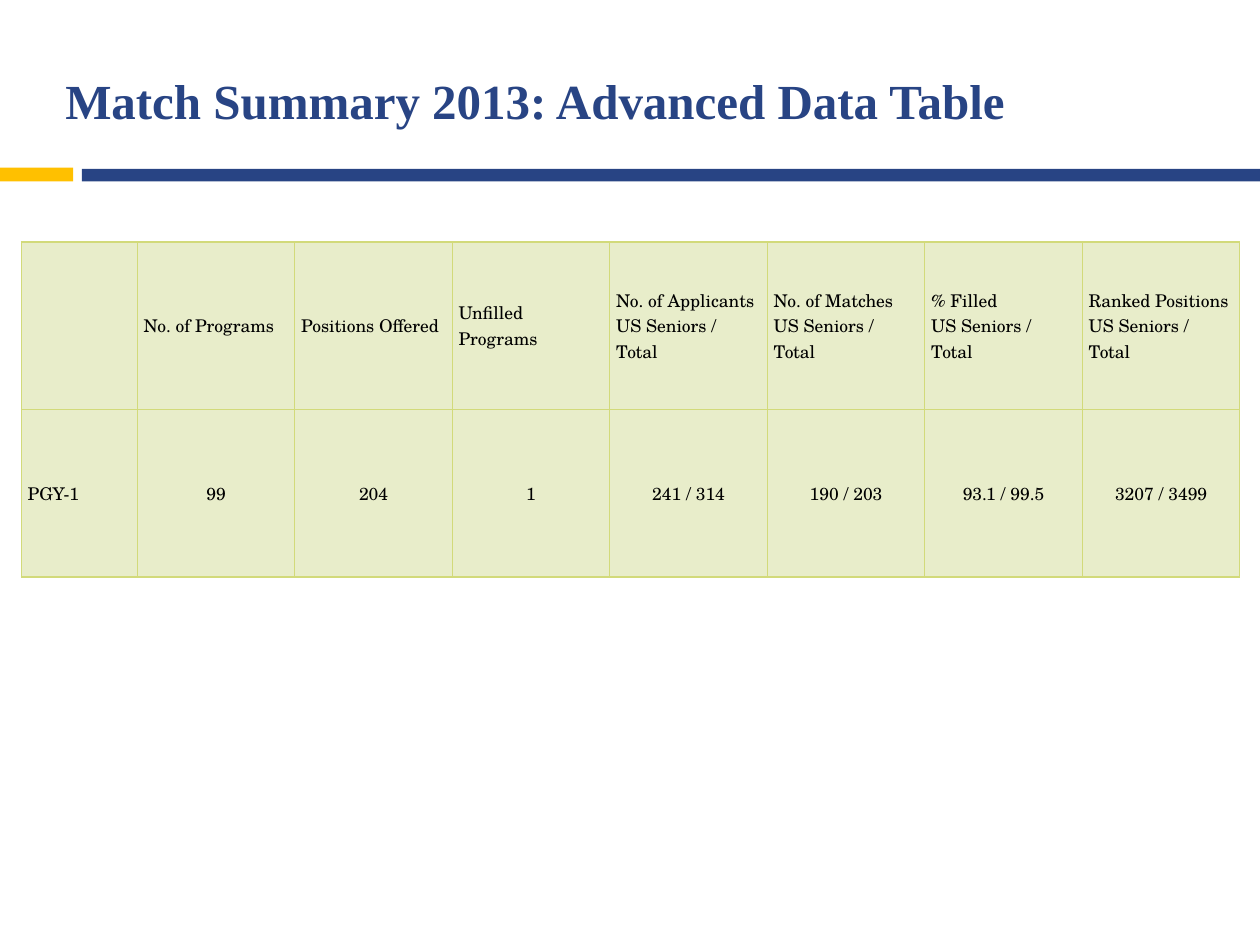
from dataclasses import dataclass

import pptx
import pptx.dml.color
import pptx.enum.shapes
import pptx.enum.text
import pptx.oxml
import pptx.oxml.ns
import pptx.util
from pptx.util import Inches

RGBColor = pptx.dml.color.RGBColor
Align = pptx.enum.text.PP_ALIGN
Anchor = pptx.enum.text.MSO_ANCHOR


@dataclass(frozen=True)
class Theme:
    navy: str = "284484"
    gold: str = "FFC000"
    cell_fill: str = "E8EDCA"
    cell_border: str = "D2DA7A"
    text: str = "000000"
    title_font: str = "Times New Roman"
    table_font: str = "TeX Gyre Schola"
    title_size: int = 28
    table_size: int = 10
    border_width: float = 0.79


@dataclass(frozen=True)
class Bar:
    left: float
    top: float
    width: float
    height: float
    color: str


THEME = Theme()
BARS = [
    Bar(0, 1.33, 0.58, 0.11, THEME.gold),
    Bar(0.65, 1.34, 9.35, 0.1, THEME.navy),
]
SENIORS = "\nUS Seniors / Total"
HEADERS = ["", "No. of Programs", "Positions Offered", "Unfilled Programs"] + [
    measure + SENIORS
    for measure in ("No. of Applicants", "No. of Matches", "% Filled", "Ranked Positions")
]
RESULTS = ["PGY-1", "99", "204", "1", "241 / 314", "190 / 203", "93.1 / 99.5", "3207 / 3499"]
LABEL_WIDTH, VALUE_WIDTH, ROW_HEIGHT = 0.92, 1.25, 1.33


def style_font(font, name: str, size: int, color: str, bold: bool = False) -> None:
    font.name = name
    font.size = pptx.util.Pt(size)
    font.bold = bold
    font.color.rgb = RGBColor.from_string(color)


def add_title(slide, text: str) -> None:
    title = slide.shapes.add_textbox(Inches(0.42), Inches(0.25), Inches(9.17), Inches(1.08))
    frame = title.text_frame
    frame.word_wrap = True
    frame.vertical_anchor = Anchor.MIDDLE
    frame.text = text
    style_font(frame.paragraphs[0].font, THEME.title_font, THEME.title_size, THEME.navy, True)


def add_bar(slide, bar: Bar) -> None:
    shape = slide.shapes.add_shape(
        pptx.enum.shapes.MSO_SHAPE.RECTANGLE,
        Inches(bar.left), Inches(bar.top), Inches(bar.width), Inches(bar.height),
    )
    shape.shadow.inherit = False
    shape.fill.solid()
    shape.fill.fore_color.rgb = RGBColor.from_string(bar.color)
    shape.line.fill.background()


def add_borders(cell) -> None:
    properties = cell._tc.get_or_add_tcPr()
    width = pptx.util.Pt(THEME.border_width)
    for position, side in enumerate(("lnL", "lnR", "lnT", "lnB")):
        border = pptx.oxml.parse_xml(
            f'<a:{side} {pptx.oxml.ns.nsdecls("a")} w="{width}"><a:solidFill>'
            f'<a:srgbClr val="{THEME.cell_border}"/></a:solidFill></a:{side}>'
        )
        properties.insert(position, border)


def fill_cell(cell, text: str, alignment) -> None:
    cell.text = text
    cell.vertical_anchor = Anchor.MIDDLE
    cell.margin_left = cell.margin_right = Inches(0.05)
    cell.margin_top = cell.margin_bottom = 0
    cell.fill.solid()
    cell.fill.fore_color.rgb = RGBColor.from_string(THEME.cell_fill)
    add_borders(cell)
    for paragraph in cell.text_frame.paragraphs:
        paragraph.alignment = alignment
        style_font(paragraph.font, THEME.table_font, THEME.table_size, THEME.text)


def add_match_table(slide, rows: list[list[str]]) -> None:
    widths = [LABEL_WIDTH] + [VALUE_WIDTH] * (len(rows[0]) - 1)
    table = slide.shapes.add_table(
        len(rows), len(widths),
        Inches(0.17), Inches(1.92), Inches(sum(widths)), Inches(ROW_HEIGHT * len(rows)),
    ).table
    table.first_row = table.horz_banding = False
    for column, width in zip(table.columns, widths):
        column.width = Inches(width)
    for row_index, texts in enumerate(rows):
        table.rows[row_index].height = Inches(ROW_HEIGHT)
        for column_index, text in enumerate(texts):
            is_value = row_index > 0 and column_index > 0
            alignment = Align.CENTER if is_value else Align.LEFT
            fill_cell(table.cell(row_index, column_index), text, alignment)


def main() -> None:
    presentation = pptx.Presentation()
    presentation.slide_width = Inches(10)
    presentation.slide_height = Inches(7.5)
    slide = presentation.slides.add_slide(presentation.slide_layouts[6])
    for bar in BARS:
        add_bar(slide, bar)
    add_title(slide, "Match Summary 2013: Advanced Data Table")
    add_match_table(slide, [HEADERS, RESULTS])
    presentation.save("out.pptx")


if __name__ == "__main__":
    main()
